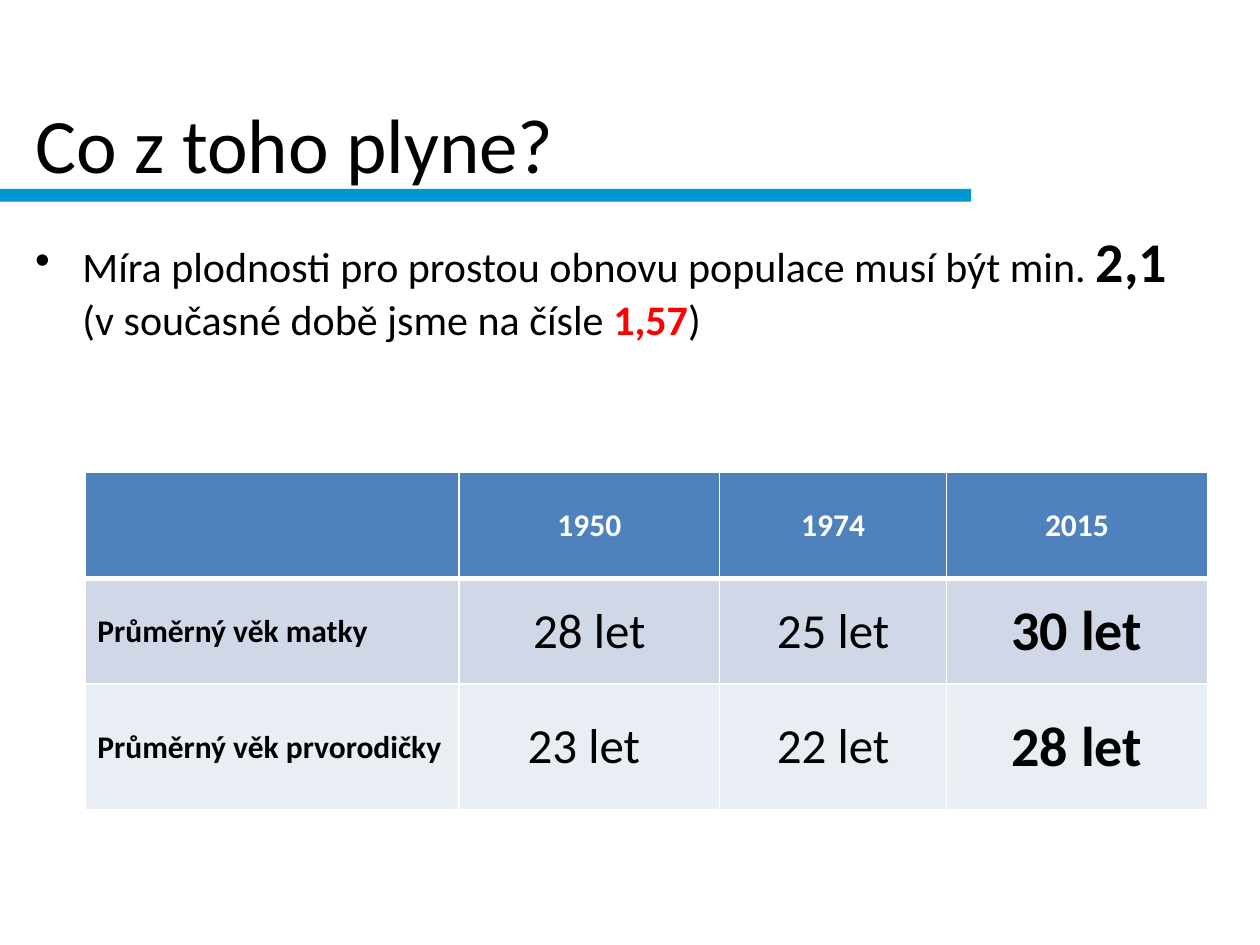
from pptx import Presentation
from pptx.dml.color import RGBColor
from pptx.enum.shapes import MSO_SHAPE
from pptx.enum.text import MSO_ANCHOR as ANCHOR, PP_ALIGN as ALIGN
from pptx.oxml.ns import qn
from pptx.util import Pt
from lxml.etree import SubElement

FONT = "Calibri"
BLACK, WHITE, RED = "000000", "FFFFFF", "FF0000"
BAR, HEADER, BANDS = "0098D2", "4F81BD", ("D0D8E8", "E9EDF4")

COLUMNS = (213.8, 149, 129.6, 149)
ROWS = (60.5, 60.5, 72)
AGES = (
    ("", "1950", "1974", "2015"),
    ("Průměrný věk matky", "28 let", "25 let", "30 let"),
    ("Průměrný věk prvorodičky", "23 let ", "22 let", "28 let"),
)


def rgb(value):
    return RGBColor.from_string(value)


def place(sp, box):
    for name, value in zip(("left", "top", "width", "height"), box):
        setattr(sp, name, Pt(value))


def add_run(p, text, size, color=BLACK, bold=False):
    r = p.add_run()
    r.text = text
    for name, value in {"name": FONT, "size": Pt(size), "bold": bold}.items():
        setattr(r.font, name, value)
    r.font.color.rgb = rgb(color)


def add_title(s, box):
    sp = s.shapes.title
    place(sp, box)
    tf = sp.text_frame
    tf.word_wrap = True
    tf.vertical_anchor = ANCHOR.BOTTOM
    p = tf.paragraphs[0]
    p.alignment = ALIGN.LEFT
    add_run(p, "Co z toho plyne?", 44)


def add_bar(s, box):
    sp = s.shapes.add_shape(MSO_SHAPE.RECTANGLE, *map(Pt, box))
    sp.shadow.inherit = False
    sp.fill.solid()
    sp.fill.fore_color.rgb = rgb(BAR)
    sp.line.fill.background()


def add_bullet(s, box):
    tf = s.shapes.add_textbox(*map(Pt, box)).text_frame
    tf.word_wrap = True
    p = tf.paragraphs[0]
    pPr = p._p.get_or_add_pPr()
    pPr.set("marL", str(Pt(27)))
    pPr.set("indent", str(-Pt(27)))
    SubElement(pPr, qn("a:buFont"), typeface="Arial")
    SubElement(pPr, qn("a:buChar"), char="•")
    add_run(p, "Míra plodnosti pro prostou obnovu populace musí být min. ", 24)
    add_run(p, "2,1", 32, bold=True)
    add_run(p, " ", 24)
    p.add_line_break()
    add_run(p, "(v současné době jsme na čísle ", 24)
    add_run(p, "1,57", 24, RED, True)
    add_run(p, ")", 24)


def set_borders(cell, top, bottom):
    tcPr = cell._tc.get_or_add_tcPr()
    for side, width in {"L": 1, "R": 1, "T": top, "B": bottom}.items():
        ln = SubElement(tcPr, qn(f"a:ln{side}"), w=str(Pt(width)))
        fill = SubElement(ln, qn("a:solidFill"))
        SubElement(fill, qn("a:srgbClr"), val=WHITE)


def text_style(row, col):
    if row == 0:
        return 18, WHITE, True
    return {0: (18, BLACK, True), 3: (32, BLACK, True)}.get(col, (28, BLACK, False))


def add_ages(s, box):
    table = s.shapes.add_table(len(ROWS), len(COLUMNS), *map(Pt, box)).table
    for column, width in zip(table.columns, COLUMNS):
        column.width = Pt(width)
    for i, (row, height) in enumerate(zip(table.rows, ROWS)):
        row.height = Pt(height)
        for j, cell in enumerate(row.cells):
            set_borders(cell, 3 if i == 1 else 1, 3 if i == 0 else 1)
            cell.fill.solid()
            cell.fill.fore_color.rgb = rgb(BANDS[i - 1] if i else HEADER)
            cell.vertical_anchor = ANCHOR.MIDDLE
            p = cell.text_frame.paragraphs[0]
            p.alignment = ALIGN.CENTER if j else ALIGN.LEFT
            if AGES[i][j]:
                add_run(p, AGES[i][j], *text_style(i, j))


def main():
    prs = Presentation()
    prs.slide_width, prs.slide_height = Pt(720), Pt(540)
    s = prs.slides.add_slide(prs.slide_layouts[5])
    add_bar(s, (0, 108, 555, 7.2))
    add_title(s, (13, 21.6, 543, 90))
    add_bullet(s, (13, 126, 671, 403))
    add_ages(s, (48.5, 270, sum(COLUMNS), sum(ROWS)))
    prs.save("out.pptx")


if __name__ == "__main__":
    main()
